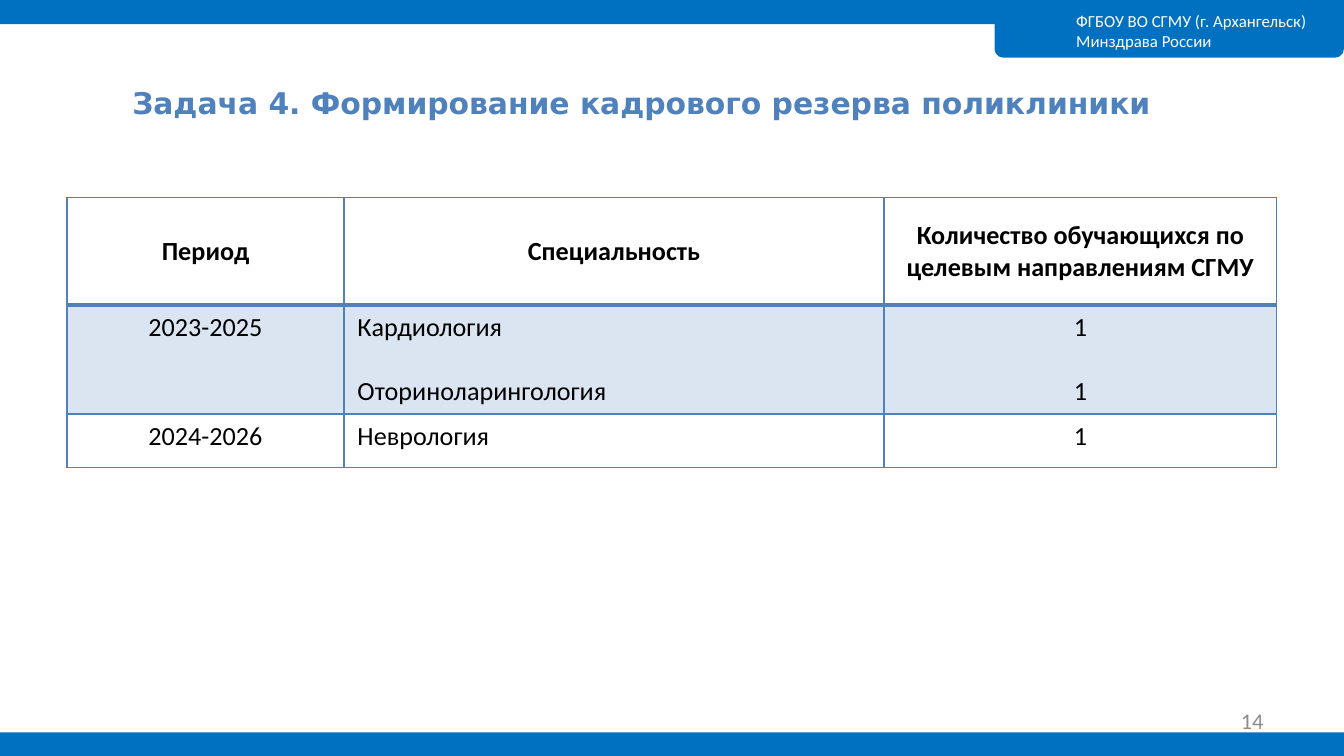
from dataclasses import dataclass

from lxml import etree
from pptx import Presentation
from pptx.dml.color import RGBColor
from pptx.enum import shapes, text
from pptx.oxml import ns
from pptx.util import Inches, Pt

BAND_BLUE = RGBColor(0x00, 0x70, 0xC0)
ACCENT = RGBColor(0x4F, 0x81, 0xBD)
WHITE = RGBColor(0xFF, 0xFF, 0xFF)
BLACK = RGBColor(0x00, 0x00, 0x00)
GREY = RGBColor(0x8C, 0x8C, 0x8C)

LEFT, CENTER, RIGHT = text.PP_ALIGN.LEFT, text.PP_ALIGN.CENTER, text.PP_ALIGN.RIGHT
MIDDLE, TOP = text.MSO_ANCHOR.MIDDLE, text.MSO_ANCHOR.TOP
RECT, ROUND = shapes.MSO_SHAPE.RECTANGLE, shapes.MSO_SHAPE.ROUNDED_RECTANGLE


@dataclass
class Box:
    left: float
    top: float
    width: float
    height: float

    def lengths(self) -> tuple:
        return tuple(Inches(v) for v in (self.left, self.top, self.width, self.height))


@dataclass
class Row:
    cells: tuple
    height: float
    header: bool = False
    shaded: bool = False


def style_text(p, size: float, color: RGBColor, align=LEFT, bold: bool = False,
               font: str = "Calibri") -> None:
    p.alignment = align
    for r in p.runs:
        r.font.name, r.font.size, r.font.bold = font, Pt(size), bold
        r.font.color.rgb = color


def add_band(slide, box: Box, kind=RECT):
    sp = slide.shapes.add_shape(kind, *box.lengths())
    sp.shadow.inherit = False
    sp.fill.solid()
    sp.fill.fore_color.rgb = BAND_BLUE
    sp.line.fill.background()
    return sp


def add_border(cell, side: str, width: float) -> None:
    ln = etree.SubElement(cell._tc.get_or_add_tcPr(), ns.qn(f"a:ln{side}"), w=str(Pt(width)))
    fill = etree.SubElement(ln, ns.qn("a:solidFill"))
    etree.SubElement(fill, ns.qn("a:srgbClr"), val=str(ACCENT))


def fill_cell(cell, row: Row, row_index: int, align) -> None:
    for side in "LRTB":
        thick = (side == "B" and row.header) or (side == "T" and row_index == 1)
        add_border(cell, side, 2 if thick else 1)
    if row.shaded:
        cell.fill.solid()
        cell.fill.fore_color.rgb = ACCENT
        color = cell._tc.tcPr.find(f"{ns.qn('a:solidFill')}/{ns.qn('a:srgbClr')}")
        etree.SubElement(color, ns.qn("a:alpha"), val="20000")
    else:
        cell.fill.background()
    cell.vertical_anchor = MIDDLE if row.header else TOP
    for i, p in enumerate(cell.text_frame.paragraphs):
        style_text(p, 14, BLACK, align, row.header)
        if i:
            p.space_before = Pt(17)


def add_staff_table(slide, box: Box, widths: tuple, rows: list) -> None:
    table = slide.shapes.add_table(len(rows), len(widths), *box.lengths()).table
    table.first_row = table.horz_banding = False
    for column, width in zip(table.columns, widths):
        column.width = Inches(width)
    for r, row in enumerate(rows):
        table.rows[r].height = Inches(row.height)
        for c, content in enumerate(row.cells):
            cell = table.cell(r, c)
            cell.text_frame.text = content
            fill_cell(cell, row, r, LEFT if c == 1 and not row.header else CENTER)


# Widescreen 16:9 slide
prs = Presentation()
prs.slide_width = Inches(10)
prs.slide_height = prs.slide_width * 9 // 16
slide = prs.slides.add_slide(prs.slide_layouts[5])

# Top and bottom bands with the organisation tab
add_band(slide, Box(0, 0, 10, 0.18))
add_band(slide, Box(0, 5.45, 10, 0.18))
tab = add_band(slide, Box(7.4, 0.03, 2.6, 0.4), ROUND)
tf = tab.text_frame
tf.text = "ФГБОУ ВО СГМУ (г. Архангельск) Минздрава России"
tf.word_wrap = True
tf.vertical_anchor = MIDDLE
style_text(tf.paragraphs[0], 9, WHITE)
tf.paragraphs[0]._p.get_or_add_pPr().set("marL", str(Inches(0.49)))

# Title
title = slide.shapes.title
title.left, title.top, title.width, title.height = Box(0.35, 0.29, 9, 0.94).lengths()
tf = title.text_frame
tf.text = "Задача 4. Формирование кадрового резерва поликлиники"
tf.auto_size = text.MSO_AUTO_SIZE.NONE
tf.vertical_anchor = MIDDLE
tf.margin_right = Inches(0.25)
style_text(tf.paragraphs[0], 16, ACCENT, CENTER, True, "DejaVu Sans")

# Table of trainees
add_staff_table(slide, Box(0.5, 1.47, 9, 2.01), (2.06, 4.02, 2.92), [
    Row(("Период", "Специальность", "Количество обучающихся по целевым направлениям СГМУ"),
        0.8, header=True),
    Row(("2023-2025", "Кардиология\nОториноларингология", "1\n1"), 0.81, shaded=True),
    Row(("2024-2026", "Неврология", "1"), 0.4),
])

# Slide number
number = slide.shapes.add_textbox(*Box(7.17, 5.21, 2.33, 0.3).lengths())
tf = number.text_frame
tf.text = "14"
tf.word_wrap = True
tf.vertical_anchor = MIDDLE
style_text(tf.paragraphs[0], 12, GREY, RIGHT)

prs.save("out.pptx")
